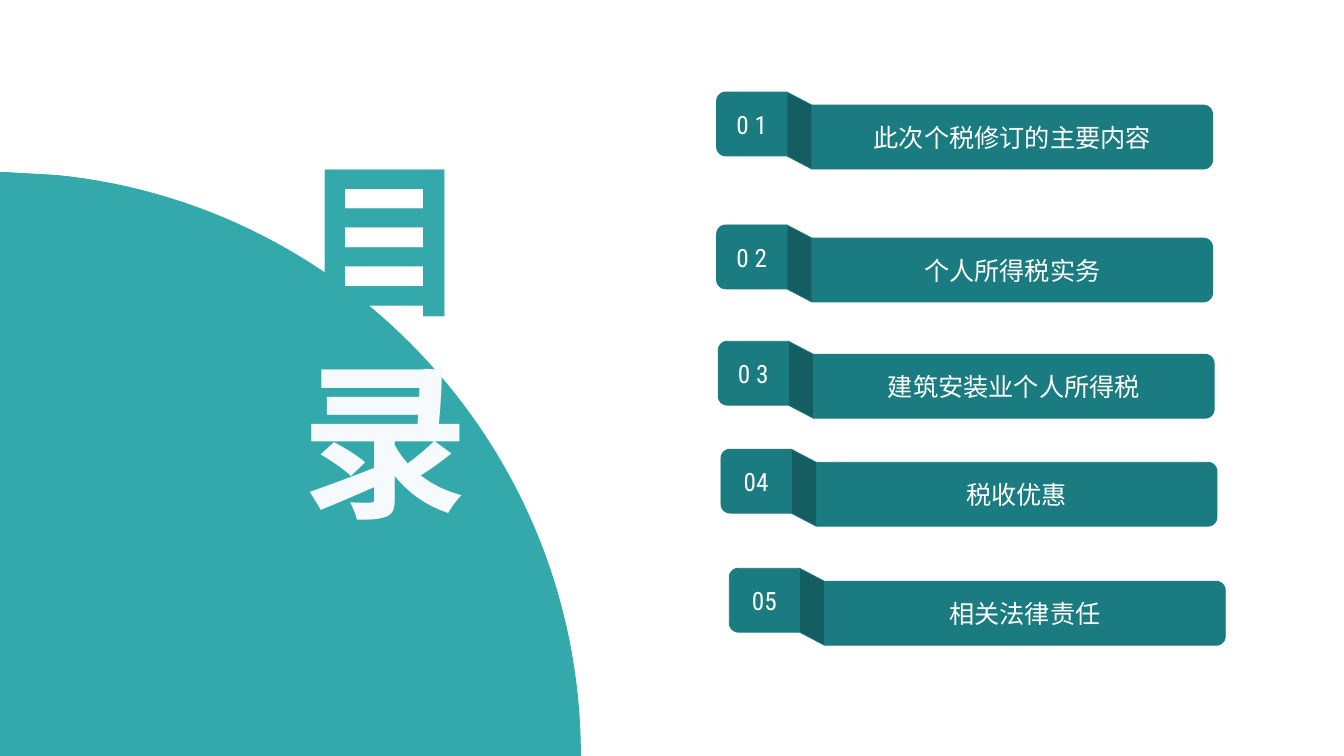
from dataclasses import dataclass
from math import cos, radians, sin

from lxml.etree import SubElement
from pptx import Presentation
from pptx.dml.color import RGBColor
from pptx.enum.text import MSO_ANCHOR, MSO_AUTO_SIZE, PP_ALIGN
from pptx.oxml.ns import qn
from pptx.util import Cm, Pt


@dataclass(frozen=True)
class Theme:
    teal: str = "33A9AB"
    dark_teal: str = "1A7B80"
    fold: str = "145E62"
    white: str = "FFFFFF"
    pale: str = "F7FAFD"
    chinese_font: str = "Noto Sans CJK SC"
    number_font: str = "Roboto Condensed"
    title_size: int = 120
    item_size: int = 18
    outline: float = 0.6


TAB_WIDTH, BAR_WIDTH, ITEM_HEIGHT = 1.77, 10.1, 1.61
FOLD_WIDTH, FOLD_DROP, CORNER = 0.63, 0.33, 0.23

# number, text, left, top
ITEMS = [
    ("0 1", "此次个税修订的主要内容", 18.06, 2.32),
    ("0 2", "个人所得税实务", 18.06, 5.67),
    ("0 3", "建筑安装业个人所得税", 18.1, 8.6),
    ("04", "税收优惠", 18.17, 11.32),
    ("05", "相关法律责任", 18.38, 14.32),
]


def set_values(target, values):
    for name, value in values.items():
        setattr(target, name, value)


def corner_points(x, y, start):
    """Quarter circle about (x, y), clockwise from the start angle."""
    angles = [radians(start + step) for step in range(0, 91, 15)]
    return [(x + CORNER * cos(a), y + CORNER * sin(a)) for a in angles]


def curve_points(first, second, third, last, steps=60):
    """Points along a cubic Bezier curve."""
    points = []
    for t in (step / steps for step in range(steps + 1)):
        weights = ((1 - t) ** 3, 3 * t * (1 - t) ** 2, 3 * t * t * (1 - t), t ** 3)
        points.append(tuple(
            sum(w * value for w, value in zip(weights, axis))
            for axis in zip(first, second, third, last)))
    return points


class SlideBuilder:
    def __init__(self, slide, theme):
        self.slide = slide
        self.theme = theme

    def outline(self, shapes, points, fill, line):
        start, *others = [(Cm(x), Cm(y)) for x, y in points]
        builder = shapes.build_freeform(*start)
        builder.add_line_segments(others)
        shape = builder.convert_to_shape()
        shape.shadow.inherit = False
        shape.fill.solid()
        shape.fill.fore_color.rgb = RGBColor.from_string(fill)
        shape.line.color.rgb = RGBColor.from_string(line)
        shape.line.width = Pt(self.theme.outline)
        return shape

    def style_run(self, run, font_name, size, color, bold=False):
        set_values(run.font, {"name": font_name, "size": Pt(size), "bold": bold})
        run.font.color.rgb = RGBColor.from_string(color)
        SubElement(run.font._element, qn("a:ea")).set("typeface", font_name)

    def label(self, shape, text, font_name):
        frame = shape.text_frame
        set_values(frame, {
            "margin_left": 0, "margin_right": 0, "margin_top": 0,
            "margin_bottom": 0, "vertical_anchor": MSO_ANCHOR.MIDDLE,
            "word_wrap": True})
        paragraph = frame.paragraphs[0]
        paragraph.alignment = PP_ALIGN.CENTER
        run = paragraph.add_run()
        run.text = text
        self.style_run(run, font_name, self.theme.item_size, self.theme.white)

    def quarter_disc(self):
        edge = curve_points((14.63, 19.05), (14.63, 11.43), (8.84, 5.16), (1.42, 4.42))
        points = [(0, 4.34), (0, 19.05), *edge]
        self.outline(self.slide.shapes, points, self.theme.teal, self.theme.teal)

    def title(self, characters):
        title = self.slide.shapes.title
        set_values(title, {"left": Cm(7.34), "top": Cm(3.28),
                           "width": Cm(7.77), "height": Cm(10.36)})
        frame = title.text_frame
        set_values(frame, {"word_wrap": True, "vertical_anchor": MSO_ANCHOR.TOP,
                           "auto_size": MSO_AUTO_SIZE.SHAPE_TO_FIT_TEXT})
        frame.text = "\n".join(characters)
        for paragraph in frame.paragraphs:
            paragraph.alignment = PP_ALIGN.JUSTIFY
            self.style_run(paragraph.runs[0], self.theme.chinese_font,
                           self.theme.title_size, self.theme.teal, bold=True)
        self.split_color(frame.paragraphs[-1].runs[0].font.fill)
        # Bring the title in front of the disc
        title.element.getparent().append(title.element)

    def split_color(self, fill):
        """Pale to teal, with a hard edge along the disc."""
        fill.gradient()
        fill.gradient_angle = 40
        stops = ((0.61, self.theme.pale), (0.62, self.theme.teal))
        for stop, (position, color) in zip(fill.gradient_stops, stops):
            stop.position = position
            stop.color.rgb = RGBColor.from_string(color)

    def item(self, number, text, left, top):
        theme = self.theme
        shapes = self.slide.shapes.add_group_shape().shapes
        fold_left = left + TAB_WIDTH
        bar_left, bar_top = fold_left + FOLD_WIDTH, top + FOLD_DROP
        bar_right, bar_bottom = bar_left + BAR_WIDTH, bar_top + ITEM_HEIGHT
        bottom = top + ITEM_HEIGHT

        bar = self.outline(shapes, [
            (bar_left, bar_top),
            *corner_points(bar_right - CORNER, bar_top + CORNER, 270),
            *corner_points(bar_right - CORNER, bar_bottom - CORNER, 0),
            (bar_left, bar_bottom)], theme.dark_teal, theme.dark_teal)
        self.label(bar, text, theme.chinese_font)

        self.outline(shapes, [
            (fold_left, top), (bar_left, bar_top),
            (bar_left, bar_bottom), (fold_left, bottom)], theme.fold, theme.dark_teal)

        tab = self.outline(shapes, [
            (fold_left, top), (fold_left, bottom),
            *corner_points(left + CORNER, bottom - CORNER, 90),
            *corner_points(left + CORNER, top + CORNER, 180)],
            theme.dark_teal, theme.dark_teal)
        self.label(tab, number, theme.number_font)


def main():
    presentation = Presentation()
    set_values(presentation, {"slide_width": Cm(33.87), "slide_height": Cm(19.05)})
    slide = presentation.slides.add_slide(presentation.slide_layouts[5])
    builder = SlideBuilder(slide, Theme())
    builder.quarter_disc()
    builder.title("目录")
    for item in ITEMS:
        builder.item(*item)
    presentation.save("out.pptx")


if __name__ == "__main__":
    main()
